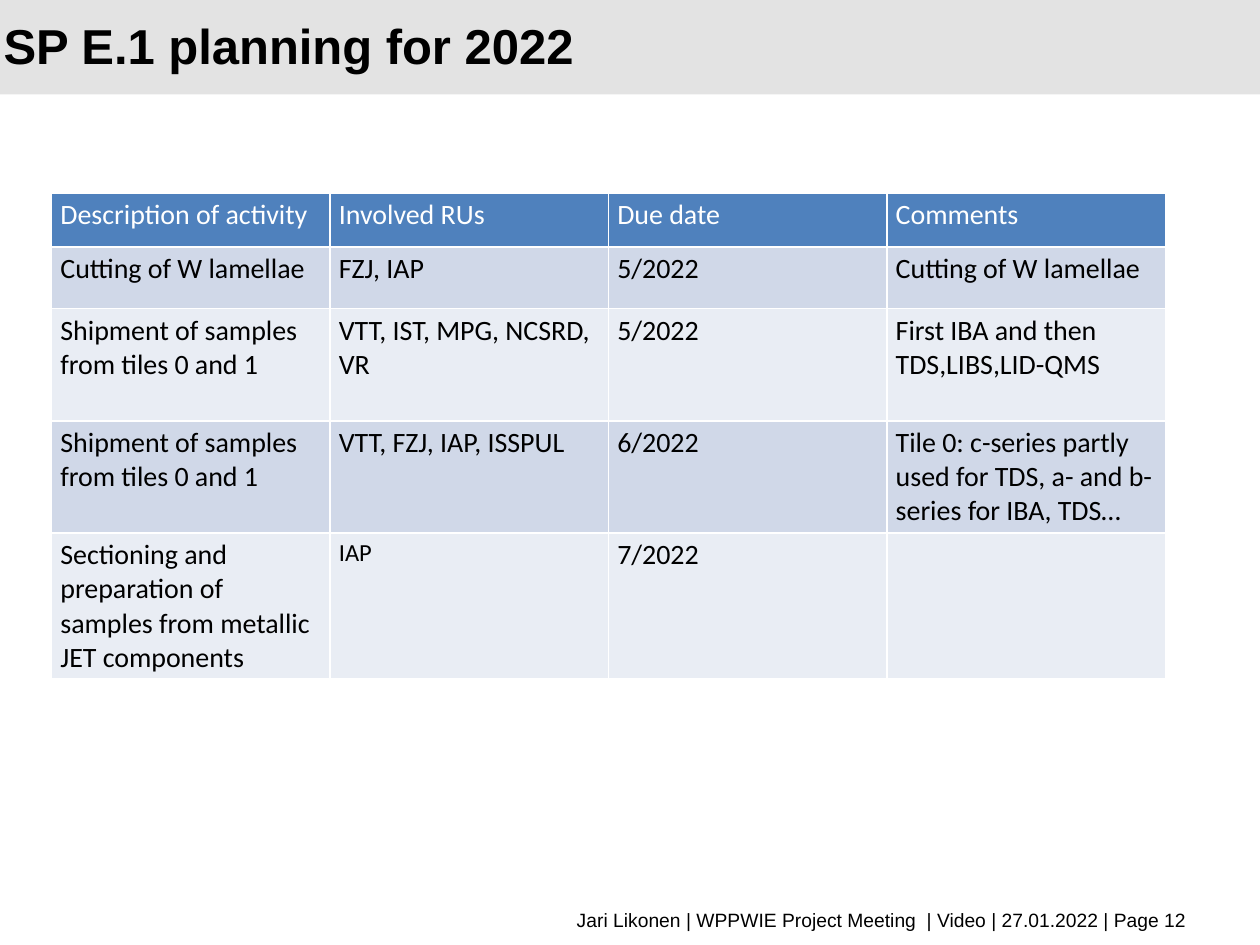
from dataclasses import dataclass

from lxml import etree
from pptx import Presentation
from pptx.dml.color import RGBColor
from pptx.enum.shapes import MSO_SHAPE
from pptx.enum.text import MSO_ANCHOR, PP_ALIGN
from pptx.oxml.ns import qn
from pptx.util import Inches, Pt

RECTANGLE = MSO_SHAPE.RECTANGLE
TOP, MIDDLE = MSO_ANCHOR.TOP, MSO_ANCHOR.MIDDLE
LEFT, RIGHT = PP_ALIGN.LEFT, PP_ALIGN.RIGHT


@dataclass(frozen=True)
class Theme:
    heading_font: str = "Arial"
    table_font: str = "Calibri"
    ink: str = "000000"
    white: str = "FFFFFF"
    banner: str = "E3E3E3"
    header: str = "4F81BD"
    bands: tuple = ("D0D8E8", "E9EDF4")
    title_size: int = 28
    table_size: int = 16
    small_size: int = 14
    footer_size: int = 11
    border_width: int = 1


class PlanningSlide:
    """Draws the elements of one slide in a shared theme."""

    def __init__(self, page, theme):
        self.page = page
        self.theme = theme

    def add_span(self, para, text, font, size, color, bold=False):
        span = para.add_run()
        span.text = text
        span.font.name = font
        span.font.size = Pt(size)
        span.font.bold = bold
        span.font.color.rgb = RGBColor.from_string(color)

    def banner(self, left, top, width, height):
        box = self.page.shapes.add_shape(
            RECTANGLE, Inches(left), Inches(top), Inches(width), Inches(height))
        box.shadow.inherit = False
        box.fill.solid()
        box.fill.fore_color.rgb = RGBColor.from_string(self.theme.banner)
        box.line.fill.background()

    def text(self, text, left, top, width, height, size,
             align=LEFT, anchor=TOP, bold=False, spacing=None):
        box = self.page.shapes.add_textbox(
            Inches(left), Inches(top), Inches(width), Inches(height))
        frame = box.text_frame
        frame.word_wrap = True
        frame.vertical_anchor = anchor
        para = frame.paragraphs[0]
        para.alignment = align
        if spacing:
            para.line_spacing = Pt(spacing)
        self.add_span(para, text, self.theme.heading_font, size, self.theme.ink, bold)

    def border(self, cell):
        properties = cell._tc.get_or_add_tcPr()
        for side in ("a:lnL", "a:lnR", "a:lnT", "a:lnB"):
            line = etree.SubElement(
                properties, qn(side), w=str(Pt(self.theme.border_width)))
            fill = etree.SubElement(line, qn("a:solidFill"))
            etree.SubElement(fill, qn("a:srgbClr"), val=self.theme.white)

    def cell(self, cell, text, fill, color, size):
        cell.margin_left = cell.margin_right = Inches(0.07)
        cell.margin_top = cell.margin_bottom = Inches(0.04)
        self.border(cell)
        cell.fill.solid()
        cell.fill.fore_color.rgb = RGBColor.from_string(fill)
        if text:
            para = cell.text_frame.paragraphs[0]
            self.add_span(para, text, self.theme.table_font, size, color)

    def table(self, rows, left, top, column_width, heights, small_cells):
        theme = self.theme
        columns = len(rows[0])
        table = self.page.shapes.add_table(
            len(rows), columns, Inches(left), Inches(top),
            Inches(column_width * columns), Inches(sum(heights))).table
        for column in table.columns:
            column.width = Inches(column_width)
        for r, (texts, height) in enumerate(zip(rows, heights)):
            table.rows[r].height = Inches(height)
            fill = theme.bands[(r - 1) % 2] if r else theme.header
            color = theme.ink if r else theme.white
            for c, text in enumerate(texts):
                size = theme.small_size if (r, c) in small_cells else theme.table_size
                self.cell(table.cell(r, c), text, fill, color, size)


ACTIVITIES = (
    ("Description of activity", "Involved RUs", "Due date", "Comments"),
    ("Cutting of W lamellae", "FZJ, IAP", "5/2022", "Cutting of W lamellae"),
    ("Shipment of samples from tiles 0 and 1", "VTT, IST, MPG, NCSRD, VR",
     "5/2022", "First IBA and then TDS,LIBS,LID-QMS"),
    ("Shipment of samples from tiles 0 and 1", "VTT, FZJ, IAP, ISSPUL",
     "6/2022", "Tile 0: c-series partly used for TDS, a- and b-series for IBA, TDS…"),
    ("Sectioning and preparation of samples from metallic JET components",
     "IAP", "7/2022", ""),
)


def main():
    deck = Presentation()
    deck.slide_width, deck.slide_height = Inches(10), Inches(7.5)
    theme = Theme()
    slide = PlanningSlide(deck.slides.add_slide(deck.slide_layouts[6]), theme)
    slide.banner(0, 0, 10, 0.75)
    slide.text("SP E.1 planning for 2022", -0.07, 0.12, 8.25, 0.5,
               theme.title_size, anchor=MIDDLE, bold=True, spacing=32)
    slide.text("Jari Likonen | WPPWIE Project Meeting  | Video | 27.01.2022 | Page 12",
               0.51, 7.16, 9.01, 0.29, theme.footer_size, align=RIGHT)
    slide.table(ACTIVITIES, 0.41, 1.53, 2.21, (0.43, 0.49, 0.89, 0.89, 1.16),
                small_cells={(4, 1)})
    deck.save("out.pptx")


if __name__ == "__main__":
    main()
